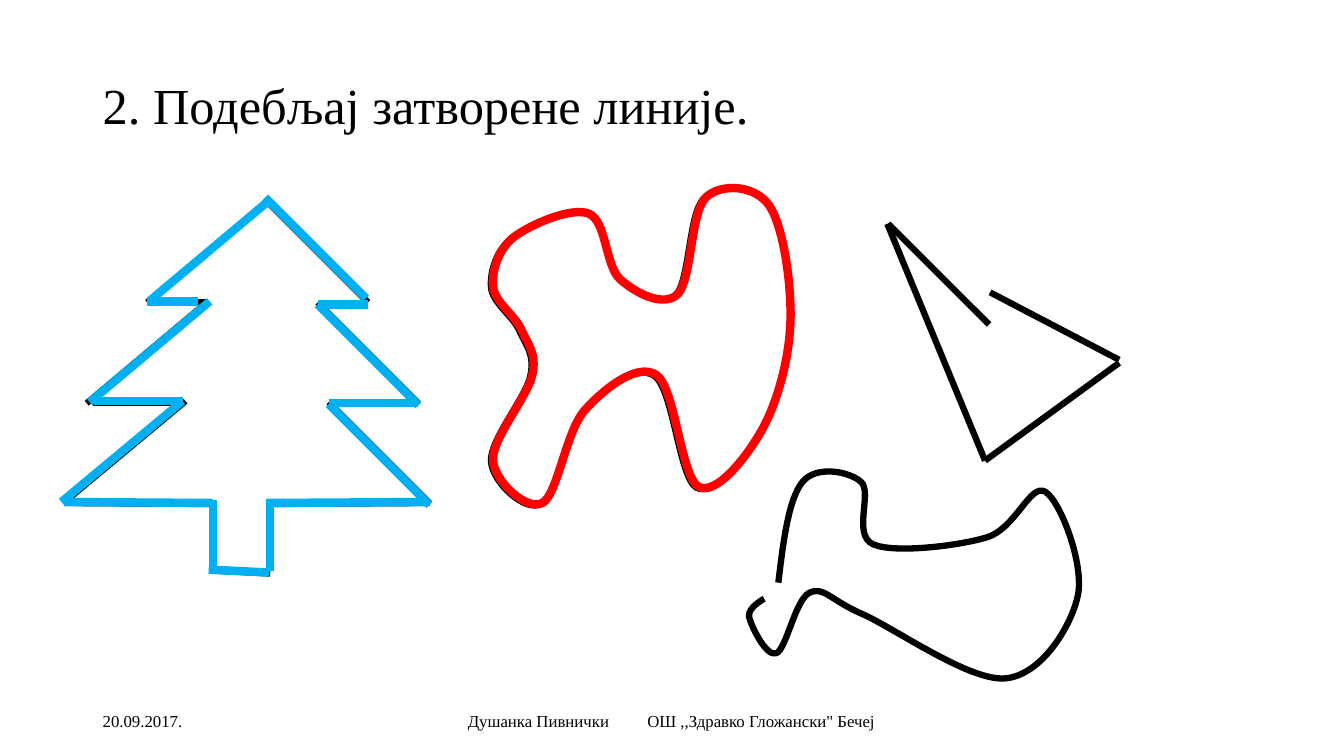
from dataclasses import dataclass

from lxml import etree
from pptx import Presentation
from pptx.dml.color import RGBColor
from pptx.enum import shapes, text
from pptx.oxml.ns import qn
from pptx.util import Inches, Pt


@dataclass(frozen=True)
class Theme:
    font: str = "Times New Roman"
    ink: RGBColor = RGBColor(0x00, 0x00, 0x00)
    paper: RGBColor = RGBColor(0xFF, 0xFF, 0xFF)
    blue: RGBColor = RGBColor(0x00, 0xB0, 0xF0)
    red: RGBColor = RGBColor(0xFF, 0x00, 0x00)
    title_size: int = 36
    footer_size: int = 12
    thin: float = 4.5
    bold: float = 6


THEME = Theme()

# Straight strokes: x1, y1, x2, y2
TREE = [
    (1.46, 3, 2.65, 2), (2.65, 2, 3.65, 3),
    (1.55, 3, 2.05, 3), (3.15, 3.02, 3.65, 3.02),
    (0.86, 4, 2.05, 3), (3.15, 3, 4.15, 4),
    (0.92, 4, 1.8, 4), (3.26, 4, 4.15, 4),
    (0.64, 4.98, 1.84, 3.98), (3.26, 3.99, 4.26, 4.99),
    (0.64, 4.99, 2.11, 5), (2.65, 5, 4.26, 4.99),
    (2.11, 5.69, 2.11, 4.98), (2.68, 5.66, 2.68, 4.95),
    (2.09, 5.66, 2.68, 5.69),
]
TREE_TRACE = [
    (1.49, 2.98, 2.68, 1.98), (2.63, 1.96, 3.63, 2.96),
    (1.46, 2.99, 1.96, 2.99), (3.15, 3.02, 3.65, 3.02),
    (0.89, 3.99, 2.08, 2.99), (3.15, 3.02, 4.15, 4.02),
    (0.93, 3.98, 1.82, 3.98), (3.26, 4, 4.15, 4),
    (0.61, 4.98, 1.81, 3.98), (3.26, 4.01, 4.26, 5.01),
    (0.64, 4.98, 2.11, 4.99), (2.64, 4.99, 4.25, 4.98),
    (2.11, 5.68, 2.11, 4.96), (2.68, 5.66, 2.68, 4.95),
    (2.07, 5.65, 2.67, 5.68),
]
OPEN_TRIANGLE = [
    (8.81, 2.22, 9.81, 3.22), (8.8, 2.22, 9.77, 4.57),
    (9.77, 4.57, 11.1, 3.6), (11.1, 3.57, 9.82, 2.9),
]

# Knots of the smooth lines
CLOSED_KNOTS = [
    (4.87, 2.85), (5.08, 2.36), (5.82, 2.13), (6.13, 2.78), (6.7, 2.93),
    (6.98, 1.97), (7.61, 2.05), (7.82, 3.2), (7.54, 4.27), (6.91, 4.84),
    (6.49, 3.73), (5.78, 4.08), (5.36, 5), (4.87, 4.58), (5.26, 3.73),
    (5.15, 3.28),
]
OPEN_KNOTS = [
    (7.72, 5.78), (7.96, 4.78), (8.54, 4.78), (8.66, 5.4), (9.79, 5.33),
    (10.37, 4.88), (10.69, 5.91), (9.97, 6.73), (8.55, 6.09), (8.03, 5.88),
    (7.7, 6.48), (7.43, 6.12), (7.58, 5.94),
]
# Guide points that set the direction at both ends of the open line
OPEN_GUIDES = (7.66, 7.3), (7.43, 6.12)


def set_all(target, values):
    for name, value in values.items():
        setattr(target, name, value)


def add_text(page, left, top, width, height, words, size, frame=None, spacing=1.0):
    box = page.shapes.add_textbox(*map(Inches, (left, top, width, height)))
    set_all(box.text_frame, {
        "word_wrap": True,
        "vertical_anchor": text.MSO_ANCHOR.MIDDLE,
        **(frame or {}),
    })
    para = box.text_frame.paragraphs[0]
    para.line_spacing = spacing
    span = para.add_run()
    span.text = words
    set_all(span.font, {"name": THEME.font, "size": Pt(size)})
    span.font.color.rgb = THEME.ink
    return para


def add_tab_stop(para, position):
    stops = etree.SubElement(para._p.get_or_add_pPr(), qn("a:tabLst"))
    etree.SubElement(stops, qn("a:tab"), pos=str(Inches(position)), algn="l")


def style_line(line, color, width):
    line.color.rgb = color
    line.width = Pt(width)


def add_strokes(page, strokes, color, width):
    for stroke in strokes:
        connector = page.shapes.add_connector(
            shapes.MSO_CONNECTOR.STRAIGHT, *map(Inches, stroke))
        style_line(connector.line, color, width)
        etree.SubElement(connector._element.spPr, qn("a:effectLst"))


def spline_points(chain):
    """Controls and end of each curve; the chain's outer points only guide."""
    points = []
    for before, start, end, after in zip(chain, chain[1:], chain[2:], chain[3:]):
        points += [
            [s + (e - b) / 6 for b, s, e in zip(before, start, end)],
            [e - (a - s) / 6 for s, e, a in zip(start, end, after)],
            end,
        ]
    return points


def add_curve(page, knots, color, width, guides=None):
    closed = guides is None
    if closed:
        chain = [knots[-1], *knots, *knots[:2]]
    else:
        chain = [guides[0], *knots, guides[1]]
    builder = page.shapes.build_freeform(*map(Inches, knots[0]))
    builder.add_line_segments(
        [tuple(map(Inches, point)) for point in spline_points(chain)], close=closed)
    shape = builder.convert_to_shape()

    # Turn each three segments into one cubic curve
    segments = list(shape._element.iter(qn("a:lnTo")))
    for first, second, last in zip(segments[::3], segments[1::3], segments[2::3]):
        curve = etree.Element(qn("a:cubicBezTo"))
        first.addprevious(curve)
        for segment in (first, second, last):
            curve.append(segment[0])
            segment.getparent().remove(segment)

    shape.shadow.inherit = False
    if closed:
        shape.fill.solid()
        shape.fill.fore_color.rgb = THEME.paper
    else:
        shape.fill.background()
    style_line(shape.line, color, width)


def main():
    deck = Presentation()
    set_all(deck, {"slide_width": Inches(13.33), "slide_height": Inches(7.5)})
    page = deck.slides.add_slide(deck.slide_layouts[6])

    # Title and footer
    add_text(page, 0.92, 0.35, 11.5, 1.45, "2. Подебљај затворене линије.",
             THEME.title_size, spacing=0.9)
    add_text(page, 0.92, 6.95, 3, 0.4, "20.09.2017.", THEME.footer_size)
    author = add_text(page, 4.42, 6.95, 4.5, 0.4,
                      "Душанка Пивнички\tОШ ,,Здравко Гложански\" Бечеј",
                      THEME.footer_size, {"margin_left": Inches(0.22)})
    add_tab_stop(author, 1.78)

    # Lines of the exercise
    add_strokes(page, TREE, THEME.ink, THEME.thin)
    add_curve(page, CLOSED_KNOTS, THEME.ink, THEME.thin)
    add_strokes(page, OPEN_TRIANGLE, THEME.ink, THEME.thin)
    add_curve(page, OPEN_KNOTS, THEME.ink, THEME.thin, OPEN_GUIDES)

    # Closed lines traced in colour
    add_strokes(page, TREE_TRACE, THEME.blue, THEME.bold)
    traced_knots = [(x + 0.02, y - 0.01) for x, y in CLOSED_KNOTS]
    add_curve(page, traced_knots, THEME.red, THEME.bold)

    deck.save("out.pptx")


if __name__ == "__main__":
    main()
